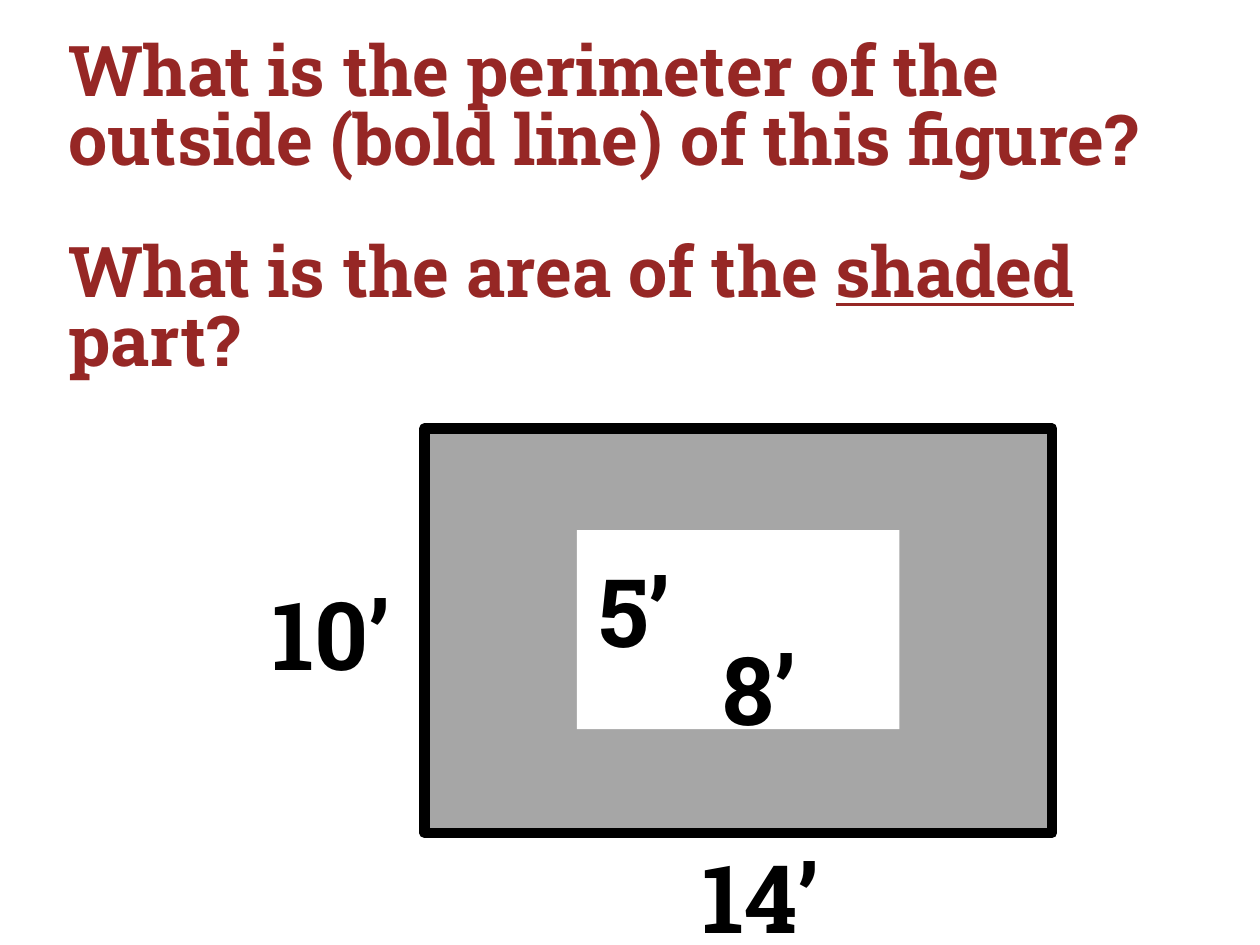
"""Slide asking for the perimeter and shaded area of a framed rectangle."""
import dataclasses

import pptx
import pptx.dml.color
import pptx.enum.shapes
import pptx.enum.text
import pptx.util

Cm, Pt = pptx.util.Cm, pptx.util.Pt


@dataclasses.dataclass(frozen=True)
class Theme:
    font: str = "Roboto Slab"
    question: str = "962725"
    ink: str = "000000"
    shade: str = "A6A6A6"
    paper: str = "FFFFFF"
    title_size: int = 40
    label_size: int = 54
    frame_width: int = 6


class FigureSlide:
    def __init__(self, prs, theme):
        self.theme = theme
        self.s = prs.slides.add_slide(prs.slide_layouts[5])
        self.figure = self.s.shapes.add_group_shape()

    def style(self, r, color, size, **extra):
        formats = {"name": self.theme.font, "size": Pt(size), "bold": True, **extra}
        for name, value in formats.items():
            setattr(r.font, name, value)
        r.font.color.rgb = pptx.dml.color.RGBColor.from_string(color)

    def frame(self, tf, **formats):
        for name, value in formats.items():
            setattr(tf, name, value)

    def title(self, box, paragraphs):
        sp = self.s.shapes.title
        sp.left, sp.top, sp.width, sp.height = map(Cm, box)
        tf = sp.text_frame
        self.frame(tf, word_wrap=True, vertical_anchor=pptx.enum.text.MSO_ANCHOR.TOP,
                   auto_size=pptx.enum.text.MSO_AUTO_SIZE.NONE)
        for i, runs in enumerate(paragraphs):
            p = tf.paragraphs[0] if i == 0 else tf.add_paragraph()
            formats = {"alignment": pptx.enum.text.PP_ALIGN.LEFT, "line_spacing": 0.82,
                       "space_before": Pt(0),
                       "space_after": Pt(36 if i < len(paragraphs) - 1 else 0)}
            for name, value in formats.items():
                setattr(p, name, value)
            for text, underline in runs:
                r = p.add_run()
                r.text = text
                self.style(r, self.theme.question, self.theme.title_size, underline=underline)

    def rectangle(self, box, fill, line=None):
        sp = self.figure.shapes.add_shape(
            pptx.enum.shapes.MSO_SHAPE.RECTANGLE, *map(Cm, box))
        sp.shadow.inherit = False
        sp.fill.solid()
        sp.fill.fore_color.rgb = pptx.dml.color.RGBColor.from_string(fill)
        if line:
            sp.line.color.rgb = pptx.dml.color.RGBColor.from_string(line)
            sp.line.width = Pt(self.theme.frame_width)
        else:
            sp.line.fill.background()

    def label(self, box, text):
        sp = self.figure.shapes.add_textbox(*map(Cm, box))
        tf = sp.text_frame
        self.frame(tf, word_wrap=True, margin_top=0, margin_bottom=0,
                   vertical_anchor=pptx.enum.text.MSO_ANCHOR.TOP)
        p = tf.paragraphs[0]
        p.alignment = pptx.enum.text.PP_ALIGN.CENTER
        r = p.add_run()
        r.text = text
        self.style(r, self.theme.ink, self.theme.label_size)


def main():
    theme = Theme()
    prs = pptx.Presentation()
    prs.slide_width, prs.slide_height = Cm(25.4), Cm(19.05)
    slide = FigureSlide(prs, theme)
    slide.rectangle((8.56, 8.64, 12.65, 8.15), theme.shade, theme.ink)
    slide.rectangle((11.63, 10.69, 6.5, 4.01), theme.paper)
    label_height = 2.13
    for text, left, top, width in (("10’", 5.03, 11.61, 3.3), ("14’", 13.67, 16.92, 3.33),
                                   ("8’", 13.64, 12.73, 3.33), ("5’", 11.4, 11.15, 2.77)):
        slide.label((left, top, width, label_height), text)
    slide.title((1.12, 0.71, 23.29, 8.41), (
        (("What is the perimeter of the outside (bold line) of this figure?", False),),
        (("What is the area of the ", False), ("shaded", True), (" part?", False)),
    ))
    prs.save("out.pptx")


if __name__ == "__main__":
    main()
